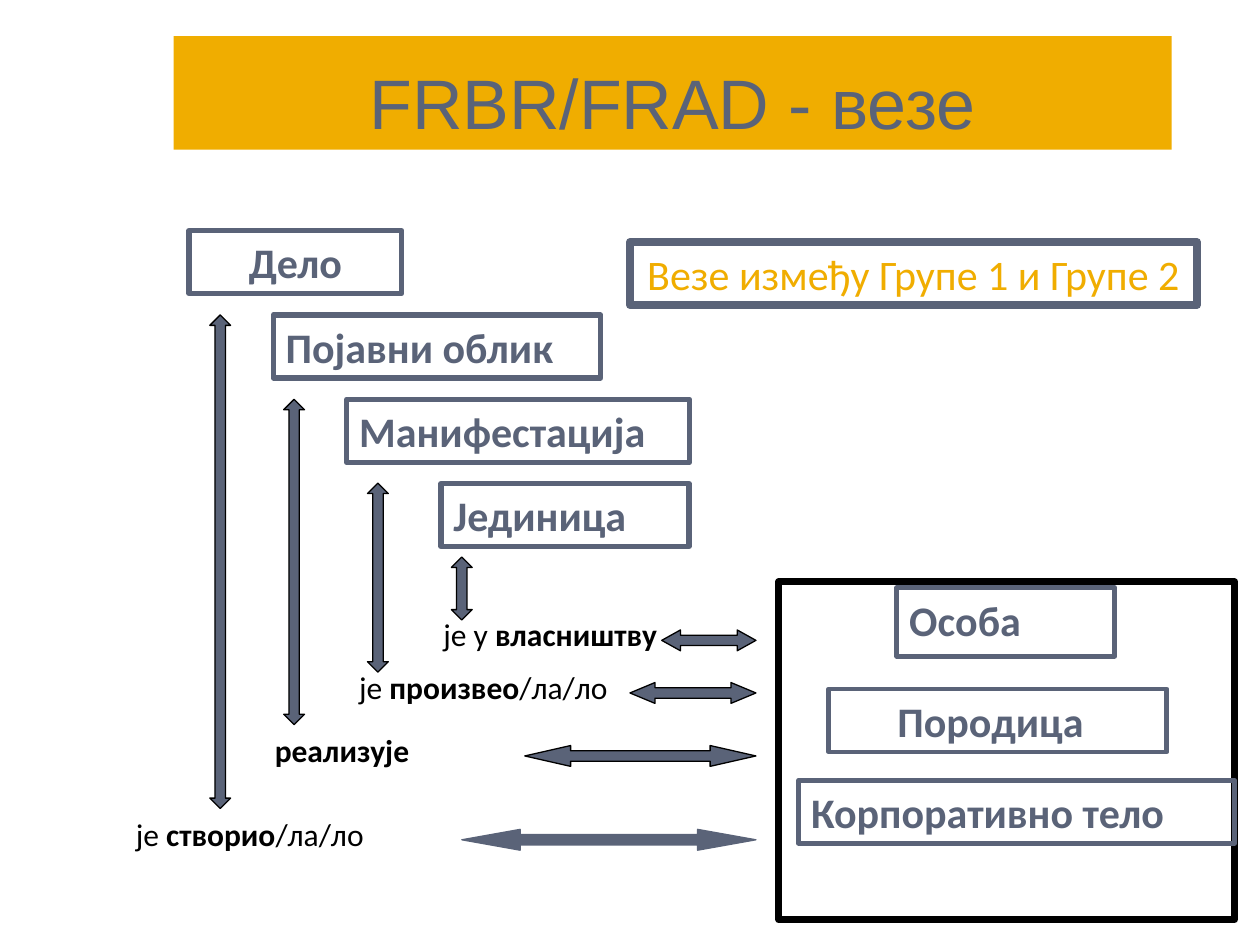
from dataclasses import dataclass
from typing import Any

from pptx import Presentation
from pptx import util as u
from pptx.dml.color import RGBColor
from pptx.enum import shapes, text

SLATE, AMBER, BLACK = "5A6378", "F0AD00", "000000"
BOX_HEIGHT = 1.27
LABEL_HEIGHT = 1.02
ARROW_WIDTH = 0.42
ARROWS_RIGHT = 15.24
SHAFT = 0.5


@dataclass
class Box:
    """A framed caption; lengths in centimetres, line and text in points."""
    caption: str
    left: float
    top: float
    width: float
    height: float = BOX_HEIGHT
    line: float = 3
    color: str = SLATE
    fill: str = ""
    font: str = "Calibri"
    size: int = 24
    bold: bool = True
    centred: bool = False
    bottom: bool = False
    inset: float = 0.25


@dataclass
class Relation:
    """A verb (plain, bold, plain) with the two arrows that meet at it."""
    words: tuple[str, str, str]
    left: float
    top: float
    width: float
    wrap: bool
    across_left: float
    across_top: float
    across_head: float
    across_line: str
    down_left: float
    down_top: float
    down_height: float
    down_head: float


def rgb(value: str) -> RGBColor:
    return RGBColor.from_string(value)


def add_outline(target: Any, kind: Any, left: float, top: float, width: float,
                height: float, line: float, line_color: str, fill: str = "") -> Any:
    """Add a preset shape; no fill or no line when empty or zero."""
    shape = target.add_shape(kind, u.Cm(left), u.Cm(top), u.Cm(width), u.Cm(height))
    shape.shadow.inherit = False
    if fill:
        shape.fill.solid()
        shape.fill.fore_color.rgb = rgb(fill)
    else:
        shape.fill.background()
    if line:
        shape.line.width = u.Pt(line)
        shape.line.color.rgb = rgb(line_color)
    else:
        shape.line.fill.background()
    return shape


def add_box(target: Any, box: Box) -> None:
    shape = add_outline(target, shapes.MSO_SHAPE.RECTANGLE, box.left, box.top,
                        box.width, box.height, box.line, SLATE, box.fill)
    frame = shape.text_frame
    frame.word_wrap = True
    frame.margin_left = u.Cm(box.inset)
    frame.vertical_anchor = text.MSO_ANCHOR.BOTTOM if box.bottom else text.MSO_ANCHOR.TOP
    if not box.bottom:
        frame.auto_size = text.MSO_AUTO_SIZE.SHAPE_TO_FIT_TEXT
    paragraph = frame.paragraphs[0]
    paragraph.text = box.caption
    paragraph.alignment = text.PP_ALIGN.CENTER if box.centred else text.PP_ALIGN.LEFT
    font = paragraph.font
    font.name, font.size, font.bold = box.font, u.Pt(box.size), box.bold
    font.color.rgb = rgb(box.color)


def add_verb(target: Any, relation: Relation) -> None:
    label = target.add_textbox(u.Cm(relation.left), u.Cm(relation.top),
                               u.Cm(relation.width), u.Cm(LABEL_HEIGHT))
    frame = label.text_frame
    frame.word_wrap = relation.wrap
    frame.auto_size = text.MSO_AUTO_SIZE.SHAPE_TO_FIT_TEXT
    paragraph = frame.paragraphs[0]
    font = paragraph.font
    font.name, font.size = "Calibri", u.Pt(18)
    font.color.rgb = rgb(BLACK)
    for words, bold in zip(relation.words, (False, True, False)):
        if words:
            run = paragraph.add_run()
            run.text, run.font.bold = words, bold


def add_arrow(target: Any, kind: Any, left: float, top: float, width: float, height: float,
              adjustments: tuple[float, float], line_color: str) -> None:
    arrow = add_outline(target, kind, left, top, width, height, 0.75, line_color, SLATE)
    for index, value in enumerate(adjustments):
        arrow.adjustments[index] = value


def add_relation_arrows(target: Any, relation: Relation) -> None:
    """Add both arrows; the up-down preset takes its head length before its shaft."""
    add_arrow(target, shapes.MSO_SHAPE.LEFT_RIGHT_ARROW, relation.across_left,
              relation.across_top, ARROWS_RIGHT - relation.across_left, ARROW_WIDTH,
              (SHAFT, relation.across_head), relation.across_line)
    add_arrow(target, shapes.MSO_SHAPE.UP_DOWN_ARROW, relation.down_left,
              relation.down_top, ARROW_WIDTH, relation.down_height,
              (relation.down_head, SHAFT), BLACK)


WORK_LEVELS = [
    ("Дело", 3.81, 4.29),
    ("Појавни облик", 5.51, 6.6),
    ("Манифестација", 6.99, 6.91),
    ("Јединица", 8.89, 5.0),
]
AGENTS = [
    Box("Особа", 18.08, 11.85, 4.39, 1.38, line=2.75),
    Box("Корпоративно тело", 16.1, 15.73, 8.79, line=2.75),
    Box("Породица", 16.71, 13.89, 6.81, line=2.75, inset=1.38),
]
RELATIONS = [
    Relation(("је у ", "власништву", ""), 8.69, 12.28, 4.85, False,
             13.34, 12.7, 0.9, BLACK, 9.1, 11.23, 1.27, 0.6),
    Relation(("је ", "произвео", "/ла/ло"), 6.99, 13.34, 5.51, False,
             12.7, 13.76, 1.2, BLACK, 7.41, 9.74, 3.81, 1.8),
    Relation(("", "реализује", ""), 5.29, 14.61, 4.42, True,
             10.58, 15.03, 2.2, BLACK, 5.72, 8.05, 6.56, 3.1),
    Relation(("је ", "створио", "/ла/ло"), 2.49, 16.3, 6.6, True,
             9.31, 16.72, 2.8, SLATE, 4.23, 6.35, 9.95, 4.7),
]
TITLE = Box("FRBR/FRAD - везе", 3.5, 0.73, 20.12, 2.29, line=0, fill=AMBER,
            font="Arial", size=40, bold=False, centred=True, bottom=True)
SUBTITLE = Box("Везе између Групе 1 и Групе 2", 12.7, 4.88, 11.43, line=4.5,
               color=AMBER, bold=False, centred=True)


def main() -> None:
    deck = Presentation()
    deck.slide_width, deck.slide_height = u.Cm(25.4), u.Cm(19.05)
    canvas = deck.slides.add_slide(deck.slide_layouts[6]).shapes

    for level, (caption, left, width) in enumerate(WORK_LEVELS):
        add_box(canvas, Box(caption, left, 4.65 + 1.7 * level, width, centred=level == 0))
    add_outline(canvas, shapes.MSO_SHAPE.RECTANGLE, 15.7, 11.73, 9.19, 6.81, 4, BLACK)
    for relation in RELATIONS:
        add_verb(canvas, relation)
    agent_group = canvas.add_group_shape().shapes
    for agent in AGENTS:
        add_box(agent_group, agent)
    add_box(canvas, TITLE)
    add_box(canvas, SUBTITLE)
    for relation in RELATIONS:
        add_relation_arrows(canvas, relation)
    deck.save("out.pptx")


if __name__ == "__main__":
    main()
